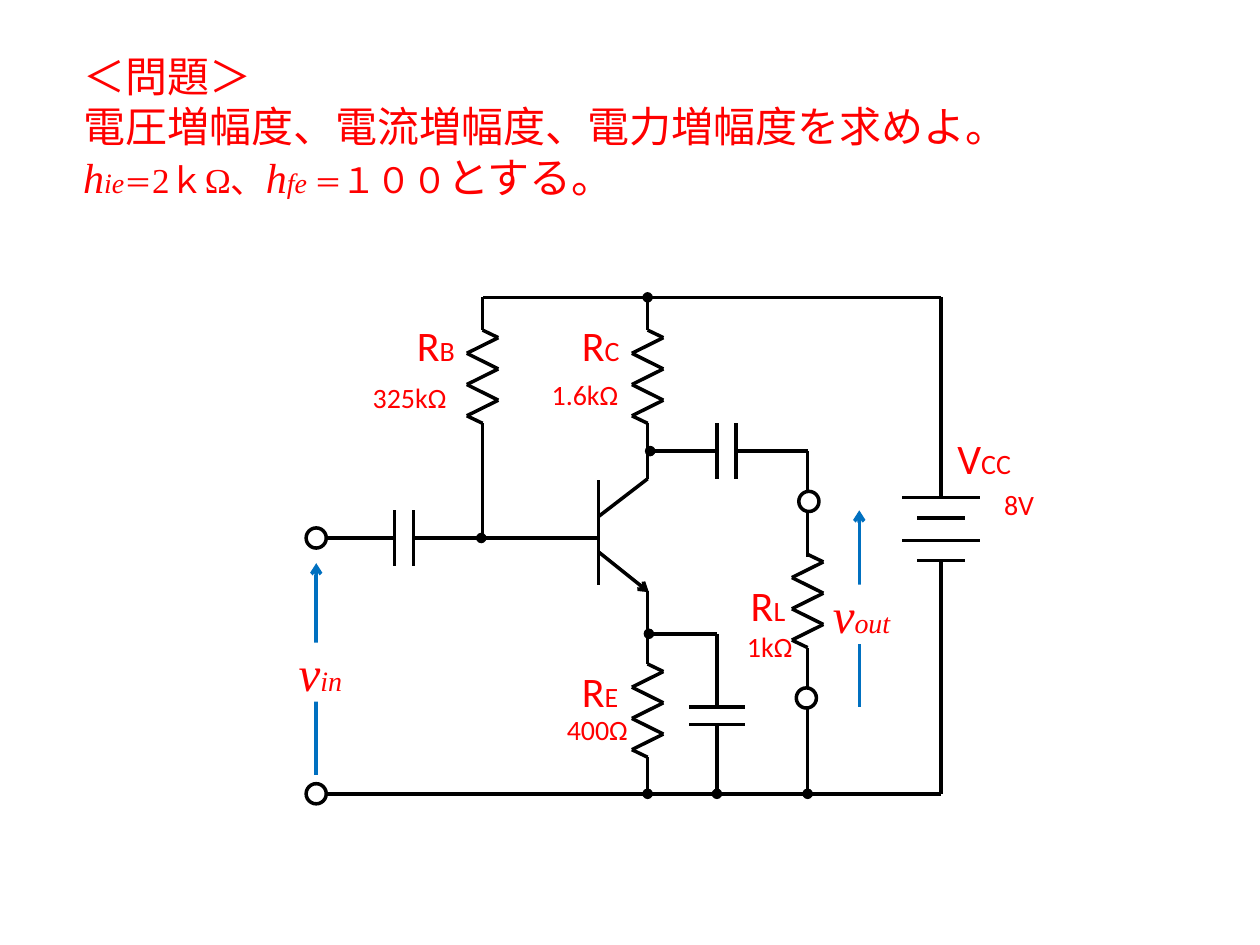
from dataclasses import dataclass
from itertools import pairwise

from lxml.etree import SubElement
from pptx import Presentation
from pptx.dml.color import RGBColor
from pptx.enum.shapes import MSO_CONNECTOR, MSO_SHAPE
from pptx.enum.text import MSO_ANCHOR, MSO_AUTO_SIZE, PP_ALIGN
from pptx.oxml.ns import qn
from pptx.util import Inches, Pt

BLACK, RED, BLUE, WHITE = "000000", "FF0000", "0070C0", "FFFFFF"
SANS, SERIF = "Calibri", "Times New Roman"


@dataclass
class Wire:
    x1: float
    y1: float
    x2: float
    y2: float
    end: str = ""  # "oval" for a junction dot, "arrow" for an arrowhead
    color: str = BLACK


@dataclass
class Label:
    left: float
    top: float
    width: float
    text: str
    subscript: str = ""


@dataclass
class Voltage:
    arrow_x: float
    arrow_bottom: float
    arrow_top: float
    left: float
    top: float
    subscript: str


def rgb(color: str) -> RGBColor:
    return RGBColor.from_string(color)


def add_run(paragraph, text: str, size: float, font: str | None = None,
            italic: bool | None = None) -> None:
    run = paragraph.add_run()
    run.text = text
    run.font.size = Pt(size)
    if font:
        run.font.name = font
    if italic is not None:
        run.font.italic = italic


def draw_wire(slide, wire: Wire) -> None:
    connector = slide.shapes.add_connector(
        MSO_CONNECTOR.STRAIGHT,
        *(Inches(v) for v in (wire.x1, wire.y1, wire.x2, wire.y2)))
    connector.line.color.rgb = rgb(wire.color)
    connector.line.width = Pt(2)
    properties = connector._element.spPr
    if wire.end:
        SubElement(properties.find(qn("a:ln")), qn("a:tailEnd"), type=wire.end)
    SubElement(properties, qn("a:effectLst"))


def draw_resistor(slide, x: float, top: float) -> None:
    zigzag = [(x + 0.125 * (-1) ** i, top + 0.06 + 0.124 * i) for i in range(6)]
    points = [(x, top), *zigzag, (x, top + 0.74)]
    for start, end in pairwise(points):
        draw_wire(slide, Wire(*start, *end))


def draw_terminal(slide, left: float, top: float) -> None:
    terminal = slide.shapes.add_shape(
        MSO_SHAPE.OVAL, Inches(left), Inches(top), Inches(0.16), Inches(0.16))
    terminal.shadow.inherit = False
    terminal.fill.solid()
    terminal.fill.fore_color.rgb = rgb(WHITE)
    terminal.line.color.rgb = rgb(BLACK)
    terminal.line.width = Pt(2)


def draw_label(slide, label: Label) -> None:
    height = 0.5 if label.subscript else 0.37
    frame = slide.shapes.add_textbox(
        Inches(label.left), Inches(label.top),
        Inches(label.width), Inches(height)).text_frame
    frame.word_wrap = True
    paragraph = frame.paragraphs[0]
    paragraph.font.name = SANS
    paragraph.font.color.rgb = rgb(RED)
    add_run(paragraph, label.text, 24 if label.subscript else 16)
    if label.subscript:
        add_run(paragraph, label.subscript, 16)


def draw_voltage(slide, voltage: Voltage) -> None:
    draw_wire(slide, Wire(voltage.arrow_x, voltage.arrow_bottom,
                          voltage.arrow_x, voltage.arrow_top, "arrow", BLUE))
    symbol = slide.shapes.add_shape(
        MSO_SHAPE.RECTANGLE, Inches(voltage.left), Inches(voltage.top),
        Inches(0.5), Inches(0.47))
    symbol.shadow.inherit = False
    symbol.fill.solid()
    symbol.fill.fore_color.rgb = rgb(WHITE)
    symbol.line.fill.background()
    frame = symbol.text_frame
    frame.margin_left = frame.margin_right = 0
    frame.margin_top = frame.margin_bottom = 0
    frame.vertical_anchor = MSO_ANCHOR.TOP
    paragraph = frame.paragraphs[0]
    paragraph.alignment = PP_ALIGN.LEFT
    paragraph.font.name = SERIF
    paragraph.font.italic = True
    paragraph.font.color.rgb = rgb(RED)
    add_run(paragraph, "v", 28)
    add_run(paragraph, voltage.subscript, 16)


def write_problem(slide) -> None:
    title = slide.shapes.title
    title.left, title.top = Inches(0.56), Inches(0.35)
    title.width, title.height = Inches(7.8), Inches(1.72)
    frame = title.text_frame
    frame.word_wrap = True
    frame.auto_size = MSO_AUTO_SIZE.NONE
    frame.vertical_anchor = MSO_ANCHOR.TOP
    heading = frame.paragraphs[0]
    task, givens = frame.add_paragraph(), frame.add_paragraph()
    for paragraph in (heading, task, givens):
        paragraph.alignment = PP_ALIGN.LEFT
        paragraph.font.color.rgb = rgb(RED)
    add_run(heading, "＜問題＞", 24, SANS)
    add_run(task, "電圧増幅度、電流増幅度、電力増幅度を求めよ。", 24, SANS)
    for text, size, font, italic in (
            ("h", 24, SERIF, True), ("ie", 16, SERIF, True),
            ("＝", 16, SERIF, False), ("2ｋΩ、", 20, SERIF, False),
            ("h", 24, SERIF, True), ("fe", 16, SERIF, True),
            (" ＝", 16, SERIF, False), ("１００", 20, SERIF, False),
            ("とする。", 24, SANS, False)):
        add_run(givens, text, size, font, italic)


BASE_X, COLLECTOR_X, BYPASS_X, LOAD_X, SUPPLY_X = 3.83, 5.14, 5.69, 6.41, 7.47
TOP_Y, OUTPUT_Y, INPUT_Y, EMITTER_Y, GROUND_Y = 2.36, 3.58, 4.27, 5.03, 6.3

WIRES = [
    # Supply and ground rails
    Wire(SUPPLY_X, TOP_Y, BASE_X, TOP_Y),
    Wire(SUPPLY_X, GROUND_Y, 2.59, GROUND_Y),
    Wire(SUPPLY_X, TOP_Y, SUPPLY_X, 3.95),
    Wire(SUPPLY_X, 4.45, SUPPLY_X, GROUND_Y),
    # Transistor
    Wire(4.75, 3.81, 4.75, 4.64),
    Wire(4.75, 4.38, 5.15, 4.7, "arrow"),
    Wire(4.75, 4.1, COLLECTOR_X, 3.8),
    # Base branch and input
    Wire(BASE_X, TOP_Y, BASE_X, 2.62),
    Wire(BASE_X, 3.36, BASE_X, INPUT_Y),
    Wire(4.75, INPUT_Y, BASE_X, INPUT_Y),
    Wire(3.28, INPUT_Y, 3.82, INPUT_Y, "oval"),
    Wire(3.13, INPUT_Y, 2.59, INPUT_Y),
    # Collector and emitter branches
    Wire(COLLECTOR_X, 2.62, COLLECTOR_X, TOP_Y, "oval"),
    Wire(COLLECTOR_X, 3.36, COLLECTOR_X, 3.8),
    Wire(COLLECTOR_X, 4.69, COLLECTOR_X, 5.27),
    Wire(COLLECTOR_X, 6.01, COLLECTOR_X, GROUND_Y, "oval"),
    # Bypass branch
    Wire(BYPASS_X, EMITTER_Y, 5.15, EMITTER_Y, "oval"),
    Wire(BYPASS_X, EMITTER_Y, BYPASS_X, 5.61),
    Wire(BYPASS_X, 5.75, BYPASS_X, GROUND_Y, "oval"),
    # Output and load branch
    Wire(BYPASS_X, OUTPUT_Y, 5.16, OUTPUT_Y, "oval"),
    Wire(LOAD_X, OUTPUT_Y, 5.84, OUTPUT_Y),
    Wire(LOAD_X, OUTPUT_Y, LOAD_X, 4.42),
    Wire(LOAD_X, 5.14, LOAD_X, GROUND_Y, "oval"),
]
# Capacitor and battery plates
WIRES += [Wire(x, y, x, y + 0.44)
          for x, y in ((3.13, 4.05), (3.28, 4.05), (5.69, 3.36), (5.84, 3.36))]
WIRES += [Wire(5.47, y, 5.91, y) for y in (5.61, 5.75)]
WIRES += [Wire(SUPPLY_X - half, y, SUPPLY_X + half, y)
          for half, y in ((0.31, 3.95), (0.19, 4.11), (0.31, 4.29), (0.19, 4.45))]

RESISTORS = [(BASE_X, 2.62), (COLLECTOR_X, 2.62), (COLLECTOR_X, 5.27), (LOAD_X, 4.4)]
TERMINALS = [(2.43, 4.19), (2.43, 6.22), (6.34, 3.9), (6.32, 5.46)]
VOLTAGES = [Voltage(2.51, 6.15, 4.47, 2.37, 5.1, "in"),
            Voltage(6.82, 5.61, 4.05, 6.61, 4.64, "out")]
LABELS = [
    Label(3.21, 2.49, 0.6, "R", "B"), Label(2.86, 2.97, 0.93, "325kΩ"),
    Label(4.52, 2.49, 0.6, "R", "C"), Label(4.28, 2.95, 0.84, "1.6kΩ"),
    Label(4.52, 5.23, 0.6, "R", "E"), Label(4.4, 5.61, 0.72, "400Ω"),
    Label(5.86, 4.55, 0.6, "R", "L"), Label(5.83, 4.95, 0.72, "1kΩ"),
    Label(7.5, 3.38, 0.72, "V", "CC"), Label(7.87, 3.82, 0.72, "8V"),
]


def main() -> None:
    presentation = Presentation()
    presentation.slide_width, presentation.slide_height = Inches(10), Inches(7.5)
    slide = presentation.slides.add_slide(presentation.slide_layouts[5])
    write_problem(slide)
    for wire in WIRES:
        draw_wire(slide, wire)
    for x, top in RESISTORS:
        draw_resistor(slide, x, top)
    for left, top in TERMINALS:
        draw_terminal(slide, left, top)
    for voltage in VOLTAGES:
        draw_voltage(slide, voltage)
    for label in LABELS:
        draw_label(slide, label)
    presentation.save("out.pptx")


if __name__ == "__main__":
    main()
